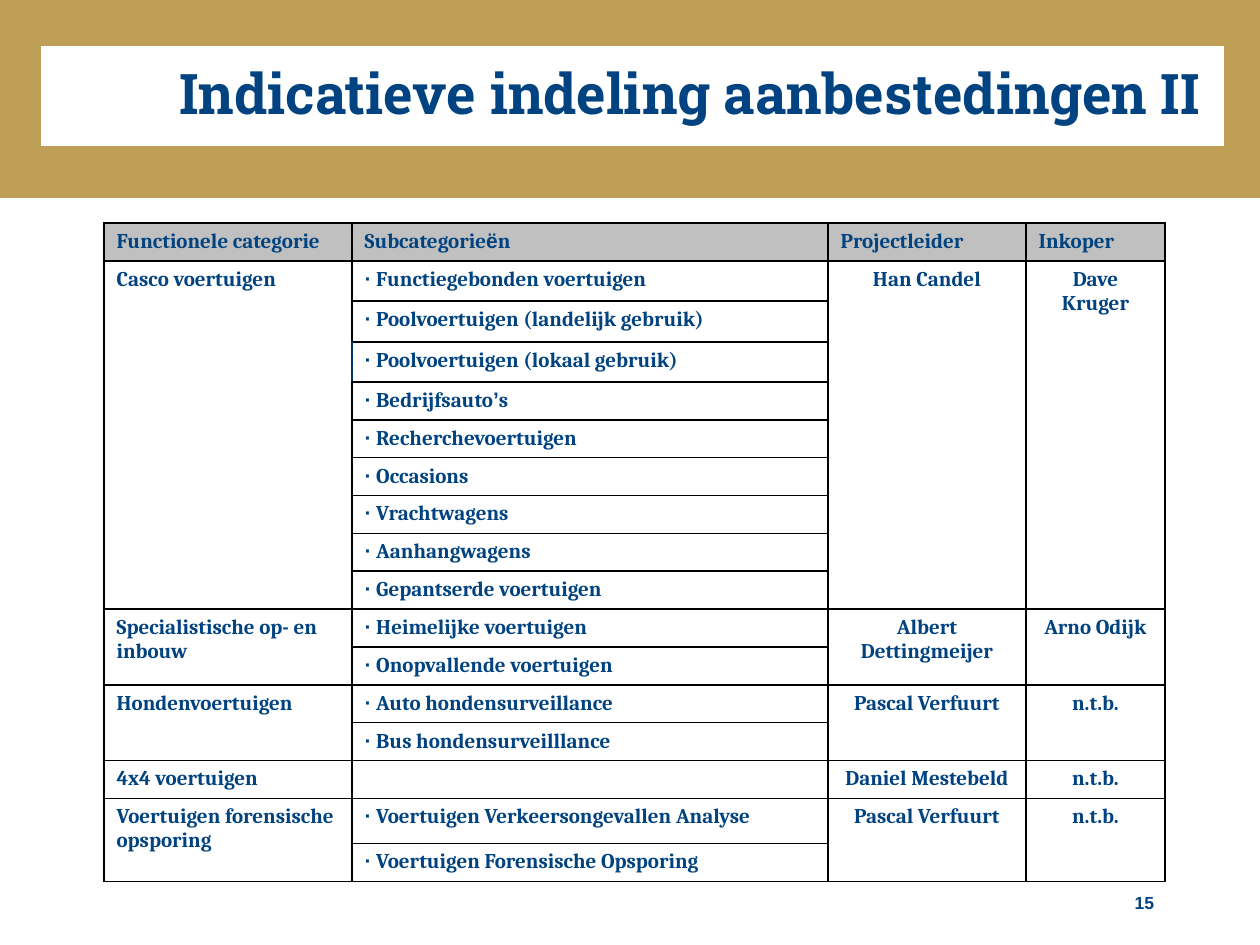
from itertools import groupby

from lxml import etree
from pptx import Presentation
from pptx.dml.color import RGBColor
from pptx.enum.text import MSO_ANCHOR, MSO_AUTO_SIZE, PP_ALIGN
from pptx.oxml.ns import qn
from pptx.util import Emu, Pt

LEFT, CENTER, RIGHT = PP_ALIGN.LEFT, PP_ALIGN.CENTER, PP_ALIGN.RIGHT
MIDDLE = MSO_ANCHOR.MIDDLE
NO_AUTOFIT = MSO_AUTO_SIZE.NONE

PX_PER_INCH = 126
COLORS = {
    "navy": "004380",
    "gold": "BE9E55",
    "white": "FFFFFF",
    "header": "C0C0C0",
    "border": "000000",
    "accent": "003366",
}
TITLE_FONT, TABLE_FONT, SYMBOL_FONT = "Roboto Slab", "Cambria", "Arial"
SYMBOLS = "·ë’"

HEADINGS = ["Functionele categorie", "Subcategorieën", "Projectleider", "Inkoper"]
CATEGORIES = [
    ("Casco voertuigen", "Han Candel", "Dave Kruger", [
        "Functiegebonden voertuigen",
        "Poolvoertuigen (landelijk gebruik)",
        "Poolvoertuigen (lokaal gebruik)",
        "Bedrijfsauto’s",
        "Recherchevoertuigen",
        "Occasions",
        "Vrachtwagens",
        "Aanhangwagens",
        "Gepantserde voertuigen",
    ]),
    ("Specialistische op- en inbouw", "Albert Dettingmeijer", "Arno Odijk", [
        "Heimelijke voertuigen",
        "Onopvallende voertuigen",
    ]),
    ("Hondenvoertuigen", "Pascal Verfuurt", "n.t.b.", [
        "Auto hondensurveillance",
        "Bus hondensurveilllance",
    ]),
    ("4x4 voertuigen", "Daniel Mestebeld", "n.t.b.", [""]),
    ("Voertuigen forensische opsporing", "Pascal Verfuurt", "n.t.b.", [
        "Voertuigen Verkeersongevallen Analyse",
        "Voertuigen Forensische Opsporing",
    ]),
]
COLUMN_WIDTHS = [248, 476, 198, 139]
ROW_HEIGHTS = [38, 40, 41, 40] + [37] * 6 + [38, 37, 37, 37, 38, 45, 37]
ACCENT_CELL = (3, 1)


def px(length):
    """Convert pixels to EMU."""
    return Emu(round(length * 914400 / PX_PER_INCH))


def rgb(name):
    """Look up a named colour."""
    return RGBColor.from_string(COLORS[name])


def place(shape, left, top, width, height):
    """Move and size a shape in pixels."""
    shape.left, shape.top = px(left), px(top)
    shape.width, shape.height = px(width), px(height)


def format_paragraph(paragraph, font_name, size, align):
    """Apply the bold navy text style."""
    paragraph.alignment = align
    font = paragraph.font
    font.name, font.size, font.bold = font_name, Pt(size), True
    font.color.rgb = rgb("navy")


def set_insets(frame, horizontal, vertical):
    """Set the text insets in pixels."""
    frame.margin_left = frame.margin_right = px(horizontal)
    frame.margin_top = frame.margin_bottom = px(vertical)


def add_title(slide):
    """Format the title with its wide gold frame."""
    title = slide.shapes.title
    place(title, 15, 20, 1235, 152)
    title.fill.solid()
    title.fill.fore_color.rgb = rgb("white")
    title.line.color.rgb = rgb("gold")
    title.line.width = Pt(30)
    outline = title.line.fill._xPr
    etree.SubElement(outline, qn("a:miter"), lim="800000")
    frame = title.text_frame
    frame.text = "Indicatieve indeling aanbestedingen II"
    frame.word_wrap = True
    frame.auto_size = NO_AUTOFIT
    frame.vertical_anchor = MIDDLE
    set_insets(frame, 49, 20)
    format_paragraph(frame.paragraphs[0], TITLE_FONT, 32, RIGHT)
    frame.paragraphs[0].line_spacing = 0.9


def add_page_number(slide):
    """Add the page number at the lower right."""
    frame = slide.shapes.add_textbox(px(1031), px(892), px(123), px(49)).text_frame
    frame.word_wrap = True
    set_insets(frame, 0, 0)
    frame.text = "15"
    format_paragraph(frame.paragraphs[0], SYMBOL_FONT, 10, RIGHT)


def set_borders(cell, side_color):
    """Draw one-point borders around a cell."""
    properties = cell._tc.get_or_add_tcPr()
    for side in "LRTB":
        color = side_color if side in "LR" else "border"
        line = etree.SubElement(properties, qn(f"a:ln{side}"), w=str(Pt(1)))
        fill = etree.SubElement(line, qn("a:solidFill"))
        etree.SubElement(fill, qn("a:srgbClr"), val=COLORS[color])


def write_cell(cell, text, align=LEFT):
    """Write table text with symbols in their own font."""
    paragraph = cell.text_frame.paragraphs[0]
    format_paragraph(paragraph, TABLE_FONT, 12, align)
    for is_symbol, letters in groupby(text, lambda letter: letter in SYMBOLS):
        run = paragraph.add_run()
        run.text = "".join(letters)
        if is_symbol:
            run.font.name = SYMBOL_FONT


def style_table(table):
    """Set the grid sizes, borders and fills."""
    table.first_row = table.horz_banding = False
    for column, width in zip(table.columns, COLUMN_WIDTHS):
        column.width = px(width)
    for row_index, (row, height) in enumerate(zip(table.rows, ROW_HEIGHTS)):
        row.height = px(height)
        for column_index, cell in enumerate(row.cells):
            is_accent = (row_index, column_index) == ACCENT_CELL
            set_borders(cell, "accent" if is_accent else "border")
            cell.fill.solid()
            cell.fill.fore_color.rgb = rgb("white" if row_index else "header")


def add_tender_table(slide):
    """Add the table of categories, subcategories and people."""
    table = slide.shapes.add_table(
        len(ROW_HEIGHTS), len(COLUMN_WIDTHS), px(104), px(223),
        px(sum(COLUMN_WIDTHS)), px(sum(ROW_HEIGHTS)),
    ).table
    style_table(table)
    for column, heading in enumerate(HEADINGS):
        write_cell(table.cell(0, column), heading)
    first = 1
    for category, leader, buyer, subcategories in CATEGORIES:
        last = first + len(subcategories) - 1
        for column, text, align in (
            (0, category, LEFT), (2, leader, CENTER), (3, buyer, CENTER)
        ):
            cell = table.cell(first, column)
            if last > first:
                cell.merge(table.cell(last, column))
            write_cell(cell, text, align)
        for row, subcategory in enumerate(subcategories, first):
            write_cell(table.cell(row, 1), f"· {subcategory}" if subcategory else "")
        first = last + 1


def main():
    """Build and save the slide."""
    presentation = Presentation()
    presentation.slide_width, presentation.slide_height = px(1260), px(945)
    slide = presentation.slides.add_slide(presentation.slide_layouts[5])
    add_title(slide)
    add_page_number(slide)
    add_tender_table(slide)
    presentation.save("out.pptx")


if __name__ == "__main__":
    main()
